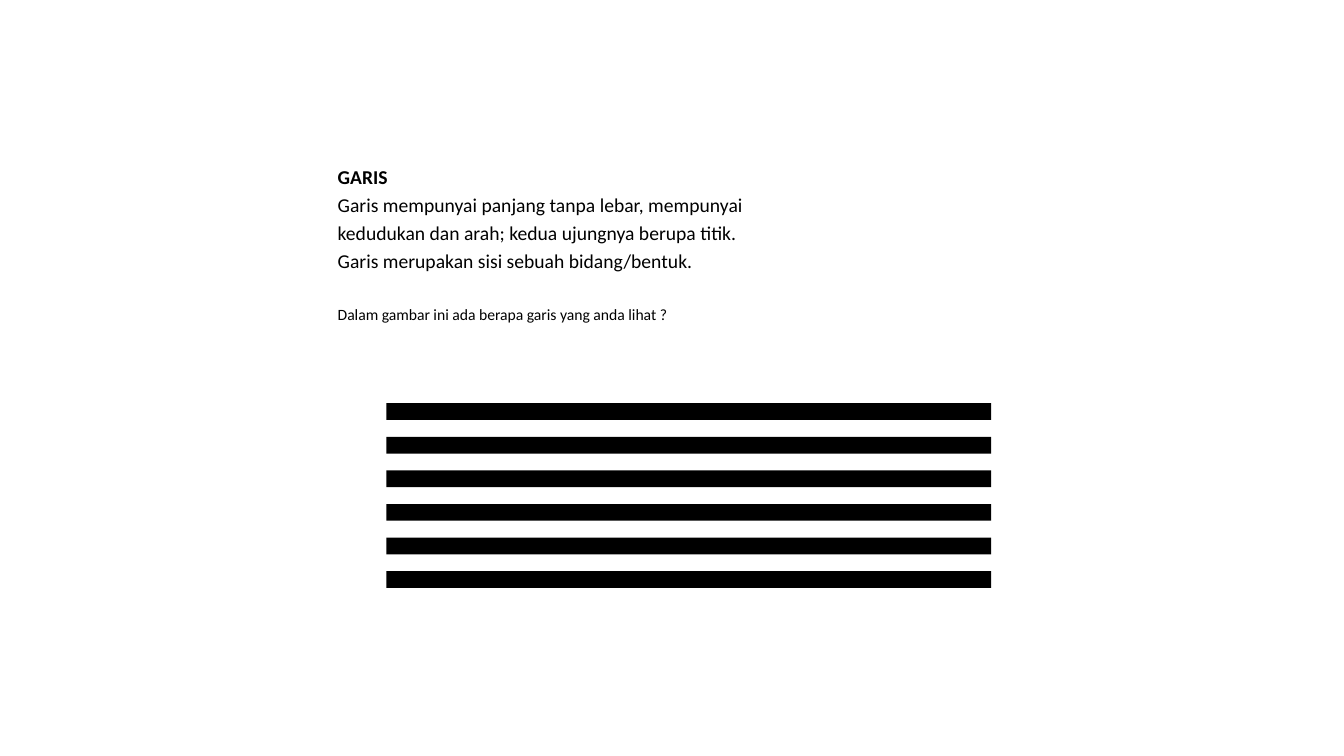
import dataclasses

import pptx
import pptx.dml.color
import pptx.enum.shapes
import pptx.enum.text
import pptx.oxml.xmlchemy
import pptx.slide
import pptx.text.text
import pptx.util
from lxml import etree

Pt = pptx.util.Pt
BLACK = pptx.dml.color.RGBColor(0, 0, 0)
FONT = "Calibri"
INDENT = 48
BARS = 6
PITCH = 24


@dataclasses.dataclass(frozen=True)
class Line:
    text: str
    size: float = 14
    bold: bool = False
    gap: float = 10


@dataclasses.dataclass(frozen=True)
class Box:
    left: float
    top: float
    width: float
    height: float


LINES = [
    Line("GARIS", bold=True),
    Line("Garis mempunyai panjang tanpa lebar, mempunyai"),
    Line("kedudukan dan arah; kedua ujungnya berupa titik."),
    Line("Garis merupakan sisi sebuah bidang/bentuk."),
    Line("Dalam gambar ini ada berapa garis yang anda lihat ?", size=11.2, gap=28.2),
]
BODY = Box(234, 120, 516, 204)
STRIPES = [Box(276, 288 + PITCH * row, 432, 12) for row in range(BARS)]


def style_line(para: pptx.text.text._Paragraph, line: Line) -> None:
    para.text = line.text
    para.line_spacing = 0.6
    para.space_before = Pt(line.gap)
    para.alignment = pptx.enum.text.PP_ALIGN.LEFT
    para.font.name = FONT
    para.font.size = Pt(line.size)
    para.font.bold = line.bold
    para.font.color.rgb = BLACK
    props = para._p.get_or_add_pPr()
    props.set("marL", str(Pt(INDENT)))
    props.set("indent", str(-Pt(INDENT)))
    bullet = etree.SubElement(props, pptx.oxml.ns.qn("a:buNone"))
    props.remove(bullet)
    props.insert_element_before(bullet, "a:tabLst", "a:defRPr", "a:extLst")


def fill_body(slide: pptx.slide.Slide) -> None:
    body = slide.placeholders[1]
    body.left, body.top = Pt(BODY.left), Pt(BODY.top)
    body.width, body.height = Pt(BODY.width), Pt(BODY.height)
    frame = body.text_frame
    frame.auto_size = pptx.enum.text.MSO_AUTO_SIZE.NONE
    frame.vertical_anchor = pptx.enum.text.MSO_ANCHOR.TOP
    frame.word_wrap = True
    for index, line in enumerate(LINES):
        para = frame.add_paragraph() if index else frame.paragraphs[0]
        style_line(para, line)


def draw_stripe(slide: pptx.slide.Slide, box: Box) -> None:
    stripe = slide.shapes.add_shape(
        pptx.enum.shapes.MSO_SHAPE.RECTANGLE,
        Pt(box.left), Pt(box.top), Pt(box.width), Pt(box.height),
    )
    stripe.shadow.inherit = False
    stripe.fill.solid()
    stripe.fill.fore_color.rgb = BLACK
    stripe.line.fill.background()


def main() -> None:
    deck = pptx.Presentation()
    deck.slide_width, deck.slide_height = Pt(960), Pt(540)
    slide = deck.slides.add_slide(deck.slide_layouts[1])
    title = slide.shapes.title.element
    title.getparent().remove(title)
    fill_body(slide)
    for box in STRIPES:
        draw_stripe(slide, box)
    deck.save("out.pptx")


if __name__ == "__main__":
    main()
